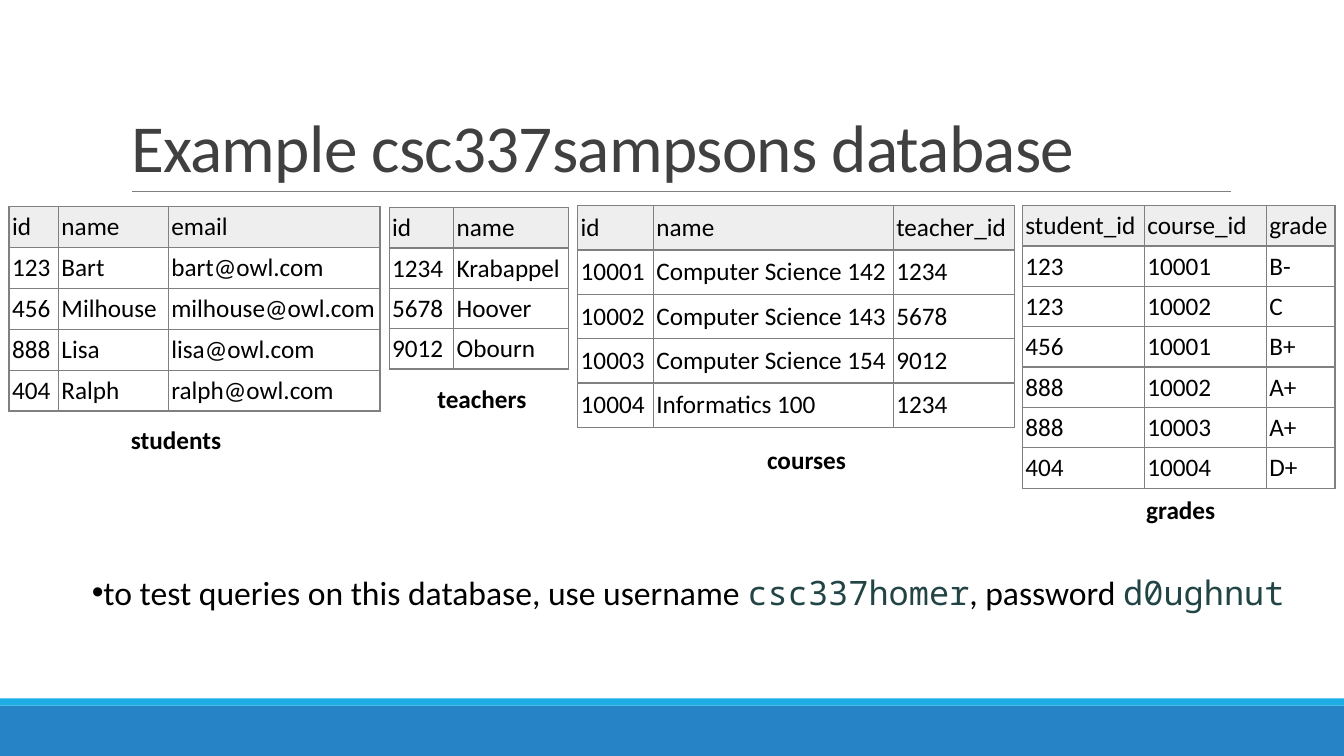
from lxml.etree import SubElement as Sub
from pptx import Presentation
from pptx.dml.color import RGBColor as RGB
from pptx.enum.shapes import MSO_CONNECTOR as Conn, MSO_SHAPE as Form
from pptx.enum.text import MSO_ANCHOR as Anchor, MSO_AUTO_SIZE as Auto, PP_ALIGN as Align
from pptx.oxml.ns import qn
from pptx.util import Inches, Pt

HUES = {"text": "000000", "title": "404040", "code": "224444", "rule": "808080",
        "head": "EEEEEE", "cell": "FFFFFF", "band": "2683C6", "strip": "1CADE4"}

TABLES = [
    ("students", (0.09, 2.05), (0.49, 1.09, 2.1), 0.4, (1.2, 4.16, 1.14), [
        ("id", "name", "email"),
        ("123", "Bart", "bart@owl.com"),
        ("456", "Milhouse", "milhouse@owl.com"),
        ("888", "Lisa", "lisa@owl.com"),
        ("404", "Ralph", "ralph@owl.com")]),
    ("teachers", (3.86, 2.06), (0.64, 1.14), 0.4, (4.24, 3.75, 1.13), [
        ("id", "name"),
        ("1234", "Krabappel"),
        ("5678", "Hoover"),
        ("9012", "Obourn")]),
    ("courses", (5.73, 2.04), (0.75, 2.38, 1.2), 0.44, (7.51, 4.36, 1.03), [
        ("id", "name", "teacher_id"),
        ("10001", "Computer Science 142", "1234"),
        ("10002", "Computer Science 143", "5678"),
        ("10003", "Computer Science 154", "9012"),
        ("10004", "Informatics 100", "1234")]),
    ("grades", (10.14, 2.04), (1.21, 1.21, 0.68), 0.4, (11.27, 4.86, 0.93), [
        ("student_id", "course_id", "grade"),
        ("123", "10001", "B-"),
        ("123", "10002", "C"),
        ("456", "10001", "B+"),
        ("888", "10002", "A+"),
        ("888", "10003", "A+"),
        ("404", "10004", "D+")]),
]

HINT = [("to test queries on this database, use username ", False), ("csc337homer", True),
        (", password ", False), ("d0ughnut", True)]


class Deck:
    """Hold the style and the current slide."""

    def __init__(self):
        self.prs = Presentation()
        self.prs.slide_width, self.prs.slide_height = Inches(13.33), Inches(7.5)
        self.slide = self.prs.slides.add_slide(self.prs.slide_layouts[1])
        self.shapes = self.slide.shapes

    def font(self, run, size=18, hue="text", face="Calibri", bold=False):
        """Format one run."""
        run.font.name, run.font.size, run.font.bold = face, Pt(size), bold
        run.font.color.rgb = RGB.from_string(HUES[hue])

    def fill(self, item, hue):
        """Fill a shape or cell with one colour."""
        item.fill.solid()
        item.fill.fore_color.rgb = RGB.from_string(HUES[hue])

    def place(self, item, x, y, w, h):
        """Move and size a placeholder."""
        item.left, item.top, item.width, item.height = map(Inches, (x, y, w, h))

    def bar(self, y, h, hue):
        """Draw a bar across the slide."""
        bar = self.shapes.add_shape(Form.RECTANGLE, 0, Inches(y), self.prs.slide_width, Inches(h))
        bar.shadow.inherit = False
        bar.line.fill.background()
        self.fill(bar, hue)

    def rule(self, x, y, end):
        """Draw a thin level line."""
        line = self.shapes.add_connector(Conn.STRAIGHT, *map(Inches, (x, y, end, y)))
        line.line.width = Pt(0.5)
        line.line.color.rgb = RGB.from_string(HUES["rule"])
        Sub(line._element.spPr, qn("a:effectLst"))

    def title(self, text):
        """Fill the title placeholder."""
        title = self.shapes.title
        self.place(title, 1.2, 0.31, 11, 1.59)
        frame = title.text_frame
        frame.text = text
        frame.auto_size, frame.vertical_anchor = Auto.NONE, Anchor.BOTTOM
        para = frame.paragraphs[0]
        para.alignment, para.line_spacing = Align.LEFT, 0.85
        self.font(para.runs[0], 48, "title")
        para.runs[0].font._element.set("spc", "-50")

    def list(self, parts):
        """Fill the body placeholder with one bulleted line."""
        body = self.slide.placeholders[1]
        self.place(body, 0.82, 5.27, 12.15, 1.34)
        self.fill(body, "cell")
        frame = body.text_frame
        frame.auto_size, frame.vertical_anchor = Auto.NONE, Anchor.MIDDLE
        frame.margin_left, frame.margin_top = Inches(0.09), 0
        frame.margin_right, frame.margin_bottom = 0, Inches(0.13)
        para = frame.paragraphs[0]
        para.space_before = Pt(0)
        props = para._p.get_or_add_pPr()
        props.set("marL", "0")
        props.set("indent", "0")
        Sub(props, qn("a:buChar"), char="•")
        for text, code in parts:
            run = para.add_run()
            run.text = text
            self.font(run, 24, *(("code", "Noto Sans Mono") if code else ()))

    def border(self, cell):
        """Line all four sides of a cell."""
        props = cell._tc.get_or_add_tcPr()
        for side in ("lnL", "lnR", "lnT", "lnB"):
            line = Sub(props, qn(f"a:{side}"), w=str(Pt(1)))
            Sub(Sub(line, qn("a:solidFill")), qn("a:srgbClr"), val=HUES["rule"])

    def table(self, spot, cols, high, rows):
        """Add a ruled table with a grey head."""
        size = sum(cols), high * len(rows)
        grid = self.shapes.add_table(len(rows), len(cols), *map(Inches, spot + size)).table
        for col, wide in zip(grid.columns, cols):
            col.width = Inches(wide)
        for r, row in enumerate(rows):
            grid.rows[r].height = Inches(high)
            for c, text in enumerate(row):
                cell = grid.cell(r, c)
                cell.text_frame.text = text
                self.font(cell.text_frame.paragraphs[0].runs[0])
                cell.vertical_anchor = Anchor.MIDDLE
                cell.margin_left = cell.margin_right = Inches(0.03)
                cell.margin_top = cell.margin_bottom = Inches(0.05)
                self.border(cell)
                self.fill(cell, "cell" if r else "head")

    def label(self, text, x, y, w):
        """Add a bold table name."""
        frame = self.shapes.add_textbox(*map(Inches, (x, y, w, 0.4))).text_frame
        frame.text = text
        frame.word_wrap = False
        self.font(frame.paragraphs[0].runs[0], bold=True)


def main():
    deck = Deck()
    deck.bar(7, 0.5, "band")
    deck.bar(6.93, 0.07, "strip")
    deck.rule(1.31, 1.9, 12.21)
    deck.title("Example csc337sampsons database")
    for name, spot, cols, high, tag, rows in TABLES:
        deck.table(spot, cols, high, rows)
        deck.label(name, *tag)
    deck.list(HINT)
    deck.prs.save("out.pptx")


if __name__ == "__main__":
    main()
